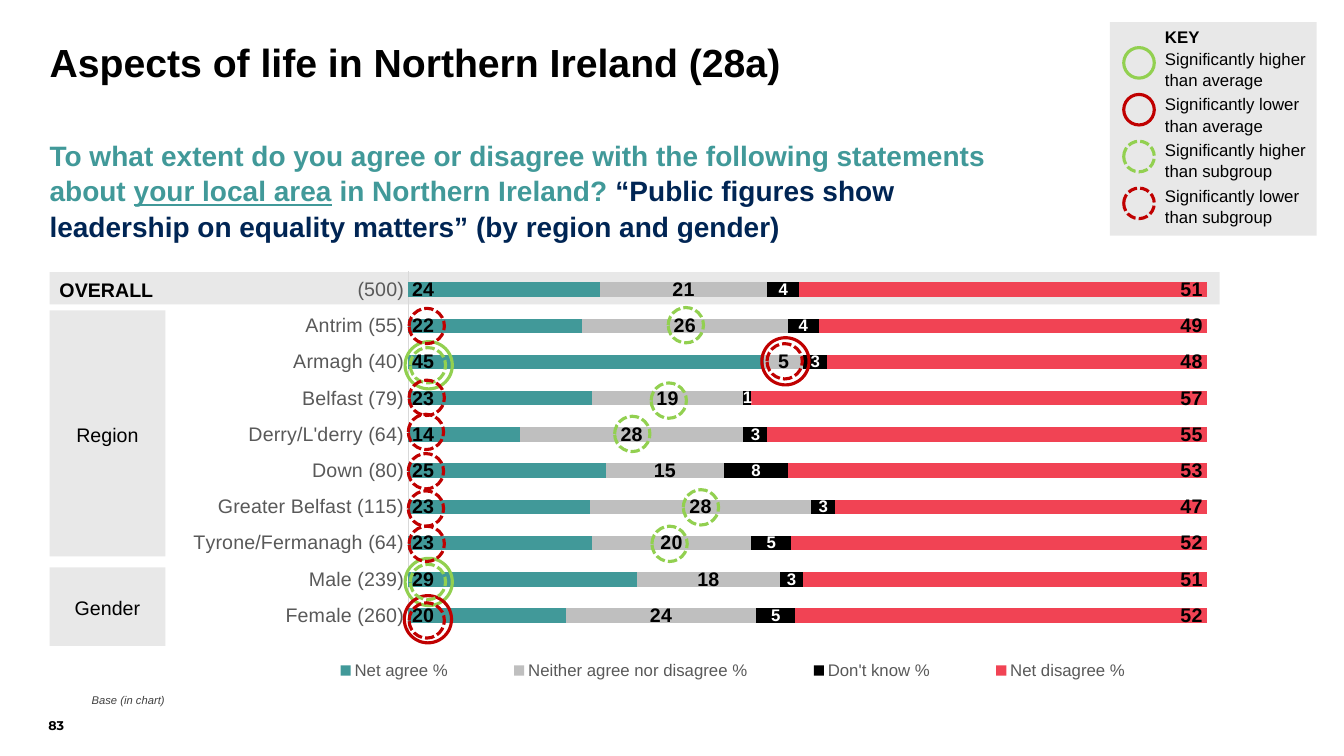
from lxml import etree
from pptx import Presentation
from pptx.chart.data import CategoryChartData as Data
from pptx.dml.color import RGBColor as RGB
from pptx.enum.chart import XL_CHART_TYPE as Kind, XL_LABEL_POSITION as Pos
from pptx.enum.chart import XL_LEGEND_POSITION as Side, XL_TICK_MARK as Tick
from pptx.enum.dml import MSO_LINE as Dash
from pptx.enum.shapes import MSO_SHAPE as Form
from pptx.enum.text import MSO_ANCHOR as Anchor, PP_ALIGN as Align
from pptx.oxml import parse_xml
from pptx.oxml.ns import nsdecls, qn
from pptx.util import Cm, Pt

BLACK = RGB(0, 0, 0)
WHITE = RGB(255, 255, 255)
TEAL = RGB(0x41, 0x99, 0x99)
NAVY = RGB(0, 0x25, 0x54)
PALE = RGB(0xE8, 0xE8, 0xE8)
GREY = RGB(0xBF, 0xBF, 0xBF)
RULE = RGB(0xD9, 0xD9, 0xD9)
SLATE = RGB(0x59, 0x59, 0x59)
DARK = RGB(0x40, 0x40, 0x40)
ROSE = RGB(0xF1, 0x43, 0x54)
RED = RGB(0xC0, 0, 0)
GREEN = RGB(0x92, 0xD0, 0x50)

KEY = [
    ("Significantly higher than average", GREEN, False),
    ("Significantly lower than average", RED, False),
    ("Significantly higher than subgroup", GREEN, True),
    ("Significantly lower than subgroup", RED, True),
]
AREAS = ["Female (260)", "Male (239)", "Tyrone/Fermanagh (64)",
         "Greater Belfast (115)", "Down (80)", "Derry/L'derry (64)",
         "Belfast (79)", "Armagh (40)", "Antrim (55)", "(500)"]
SERIES = [
    ("Net agree %", [20, 29, 23, 23, 25, 14, 23, 45, 22, 24],
     TEAL, BLACK, 14, Pos.INSIDE_BASE),
    ("Neither agree nor disagree %", [24, 18, 20, 28, 15, 28, 19, 5, 26, 21],
     GREY, BLACK, 14, Pos.CENTER),
    ("Don't know %", [5, 3, 5, 3, 8, 3, 1, 3, 4, 4],
     BLACK, WHITE, 12, Pos.CENTER),
    ("Net disagree %", [52, 51, 52, 47, 53, 55, 57, 48, 49, 51],
     ROSE, BLACK, 14, Pos.INSIDE_END),
]
MARKS = [
    (GREEN, False, 1.19, [(10.21, 8.61), (10.21, 14.07)]),
    (RED, False, 1.19, [(19.2, 8.51), (10.19, 15.01)]),
    (GREEN, True, 0.89, [(16.84, 7.75), (10.34, 8.76), (16.41, 9.65),
                         (15.49, 10.49), (17.22, 12.34), (16.43, 13.26),
                         (10.34, 14.22)]),
    (RED, True, 0.89, [(10.31, 7.77), (19.33, 8.66), (10.31, 9.58),
                       (10.29, 10.44), (10.29, 11.43), (10.29, 12.37),
                       (10.31, 13.26), (10.31, 15.19)]),
]


def style(font, size, color=None, bold=False, name="Arial"):
    font.name, font.size, font.bold = name, Pt(size), bold
    if color is not None:
        font.color.rgb = color


def frame(shape, anchor=Anchor.TOP, wrap=True):
    text = shape.text_frame
    text.margin_left = text.margin_right = 0
    text.margin_top = text.margin_bottom = 0
    text.vertical_anchor, text.word_wrap = anchor, wrap
    return text.paragraphs[0]


def label(slide, box, words, size, color=BLACK, bold=False,
          anchor=Anchor.TOP, wrap=True, name="Arial"):
    para = frame(slide.shapes.add_textbox(*map(Cm, box)), anchor, wrap)
    para.text, para.line_spacing = words, 1.05
    style(para.font, size, color, bold, name)
    return para


def panel(slide, box, words="", bold=False, align=Align.CENTER):
    shape = slide.shapes.add_shape(Form.RECTANGLE, *map(Cm, box))
    shape.shadow.inherit = False
    shape.fill.solid()
    shape.fill.fore_color.rgb = PALE
    shape.line.fill.background()
    if words:
        shape.text_frame.vertical_anchor = Anchor.MIDDLE
        para = shape.text_frame.paragraphs[0]
        para.text, para.alignment, para.line_spacing = words, align, 1.1
        style(para.font, 14, BLACK, bold)


def ring(slide, left, top, size, color, dashed):
    shape = slide.shapes.add_shape(Form.OVAL, Cm(left), Cm(top), Cm(size), Cm(size))
    shape.shadow.inherit = False
    shape.fill.background()
    shape.line.color.rgb, shape.line.width = color, Pt(2.25)
    if dashed:
        shape.line.dash_style = Dash.SQUARE_DOT


def heading(slide):
    title = slide.shapes.title
    title.left, title.top, title.width, title.height = map(Cm, (1.25, 1.09, 25.96, 2.16))
    para = frame(title)
    para.text = "Aspects of life in Northern Ireland (28a)"
    para.alignment, para.line_spacing = Align.LEFT, 0.9
    style(para.font, 28, BLACK, True)


def question(slide):
    para = label(slide, (1.25, 3.45, 24.74, 2.57), "", 20, TEAL, True)
    for words, color, line in [
        ("To what extent do you agree or disagree with the following statements about ",
         TEAL, False),
        ("your local area", TEAL, True),
        (" in Northern Ireland? ", TEAL, False),
        ("“Public figures show leadership on equality matters” (by region and gender)",
         NAVY, False),
    ]:
        run = para.add_run()
        run.text, run.font.underline = words, line
        run.font.color.rgb = color


def legend(slide):
    panel(slide, (27.97, 0.56, 5.21, 5.38))
    label(slide, (29.36, 0.64, 1.14, 0.51), "KEY", 12, bold=True)
    for row, (words, color, dashed) in enumerate(KEY):
        ring(slide, 28.32, 1.2 + 1.18 * row, 0.77, color, dashed)
        label(slide, (29.36, 1.2 + 1.15 * row, 3.7, 1.02), words, 12)


def place(node, index, box, inner=""):
    for old in node.findall(qn("c:layout")):
        node.remove(old)
    modes = "".join(f'<c:{side}Mode val="edge"/>' for side in "xy")
    sizes = "".join(f'<c:{side} val="{size}"/>' for side, size in zip("xywh", box))
    node.insert(index, parse_xml(
        f'<c:layout {nsdecls("c")}><c:manualLayout>{inner}{modes}{sizes}'
        '</c:manualLayout></c:layout>'))


def bars(slide):
    data = Data(number_format="0")
    data.categories = AREAS
    for name, values, *_ in SERIES:
        data.add_series(name, values)
    chart = slide.shapes.add_chart(
        Kind.BAR_STACKED_100, *map(Cm, (4.17, 6.4, 26.24, 11.05)), data).chart
    style(chart.font, 10, BLACK)
    chart.has_title = False
    chart.has_legend = True
    chart.legend.position = Side.BOTTOM
    chart.legend.include_in_layout = False
    style(chart.legend.font, 12, SLATE)
    axis = chart.category_axis
    axis.major_tick_mark = axis.minor_tick_mark = Tick.NONE
    axis.format.line.color.rgb, axis.format.line.width = RULE, Pt(0.75)
    style(axis.tick_labels.font, 14, SLATE)
    chart.value_axis.has_major_gridlines = False
    chart.value_axis.visible = False
    plot = chart.plots[0]
    plot.gap_width, plot.overlap, plot.vary_by_categories = 150, 100, False
    for series, (_, _, fill, ink, size, pos) in zip(plot.series, SERIES):
        series.format.fill.solid()
        series.format.fill.fore_color.rgb = fill
        tags = series.data_labels
        tags.show_value, tags.position = True, pos
        tags.number_format, tags.number_format_is_linked = "0", False
        style(tags.font, size, ink, True)
    root = chart.element.find(qn("c:chart"))
    place(root.find(qn("c:plotArea")), 0, (0.233, 0.04, 0.767, 0.826),
          '<c:layoutTarget val="inner"/>')
    place(root.find(qn("c:legend")), 1, (0.11, 0.91, 0.87, 0.08))
    clear = parse_xml(f'<c:spPr {nsdecls("c", "a")}><a:noFill/></c:spPr>')
    etree.SubElement(etree.SubElement(clear, qn("a:ln")), qn("a:noFill"))
    root.addnext(clear)


def main():
    deck = Presentation()
    deck.slide_width, deck.slide_height = Cm(33.87), Cm(19.05)
    slide = deck.slides.add_slide(deck.slide_layouts[5])
    heading(slide)
    question(slide)
    legend(slide)
    panel(slide, (1.25, 6.86, 29.49, 0.81), "OVERALL", True, Align.LEFT)
    panel(slide, (1.25, 7.82, 2.92, 6.2), "Region")
    panel(slide, (1.25, 14.3, 2.92, 1.98), "Gender")
    bars(slide)
    for color, dashed, size, spots in MARKS:
        for left, top in spots:
            ring(slide, left, top, size, color, dashed)
    base = label(slide, (2.31, 17.45, 31.32, 0.36), "Base (in chart)", 8, DARK,
                 anchor=Anchor.BOTTOM)
    base.font.italic = True
    label(slide, (1.22, 17.45, 0.84, 1.02), "83", 9, bold=True,
          anchor=Anchor.BOTTOM, wrap=False, name="Montserrat")
    deck.save("out.pptx")


if __name__ == "__main__":
    main()
